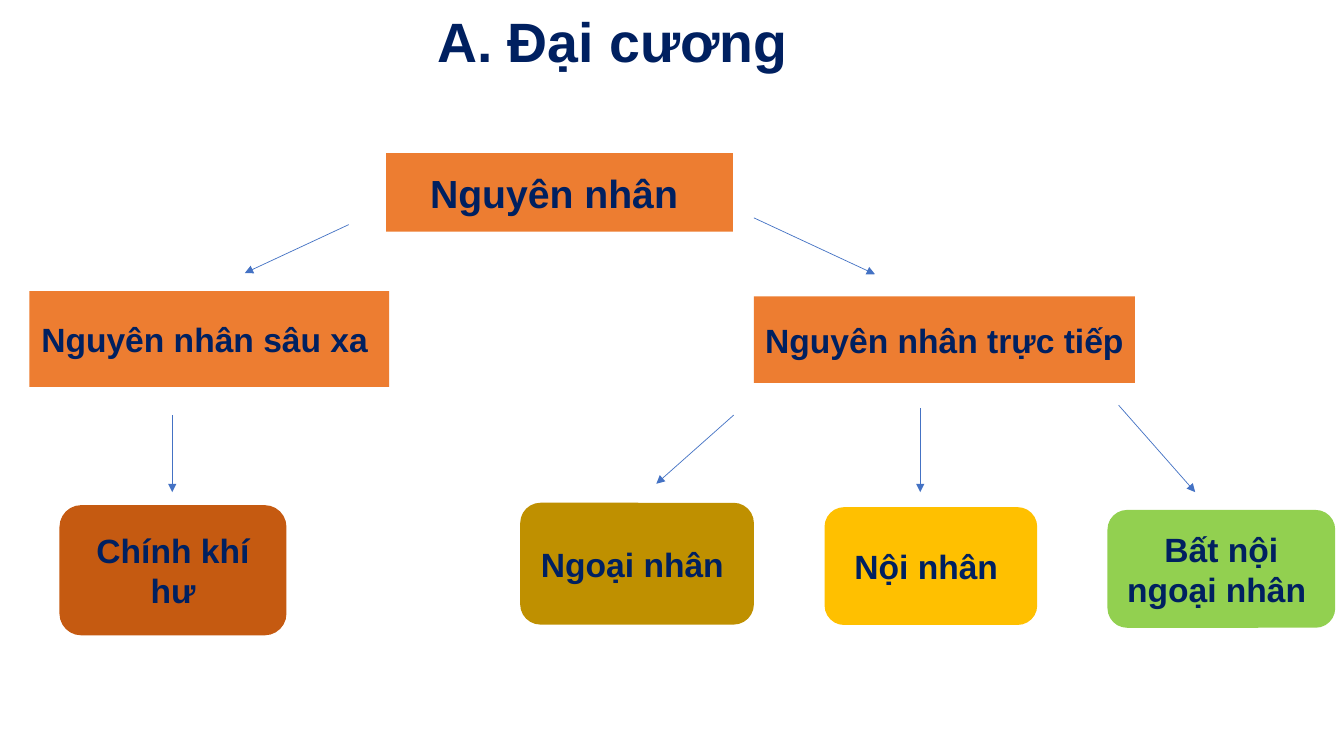
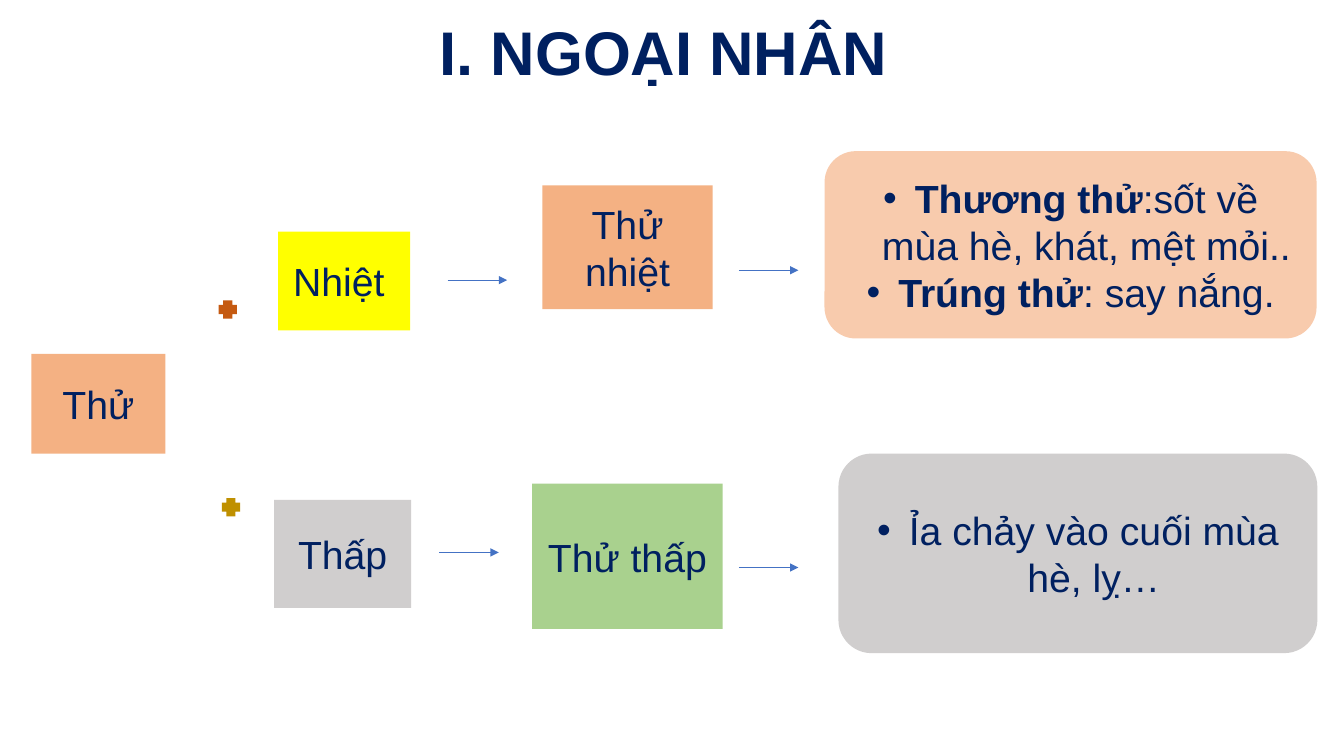
from lxml import etree
from pptx import Presentation
from pptx.dml.color import RGBColor
from pptx.enum.shapes import MSO_CONNECTOR as Connector, MSO_SHAPE as Shape
from pptx.enum.text import MSO_ANCHOR as Anchor, MSO_AUTO_SIZE as AutoSize, PP_ALIGN as Align
from pptx.oxml.ns import qn
from pptx.util import Cm, Pt

# Shared look
FONT = "Arial"
NAVY = RGBColor(0x00, 0x20, 0x60)
BLUE = RGBColor(0x44, 0x72, 0xC4)
ORANGE = RGBColor(0xED, 0x7D, 0x31)
RUST = RGBColor(0xC5, 0x5A, 0x11)
OCHRE = RGBColor(0xBF, 0x90, 0x00)
AMBER = RGBColor(0xFF, 0xC0, 0x00)
LIME = RGBColor(0x92, 0xD0, 0x50)
APRICOT = RGBColor(0xF4, 0xB1, 0x83)
PEACH = RGBColor(0xF8, 0xCB, 0xAD)
YELLOW = RGBColor(0xFF, 0xFF, 0x00)
GREY = RGBColor(0xD0, 0xCE, 0xCE)
GREEN = RGBColor(0xA9, 0xD1, 0x8E)
BULLET_INDENT = Cm(0.8)
RECT, ROUND, PLUS = Shape.RECTANGLE, Shape.ROUNDED_RECTANGLE, Shape.CROSS

# Content: all places are in centimetres.
# Boxes: preset, (left, top, width, height), fill, text size, bold, text;
# a list as text holds bulleted paragraphs of (bold lead, plain rest).
# Arrows: (start x, start y, end x, end y).
PAGES = [
    {
        "title": ("A. Đại cương ", 39.6, (0.43, 0.23, 30.4, 1.78)),
        "boxes": [
            (RECT, (9.73, 3.86, 8.74, 1.98), ORANGE, 28, True, "Nguyên nhân "),
            (RECT, (0.74, 7.34, 9.07, 2.41), ORANGE, 24, True, "Nguyên nhân sâu xa "),
            (RECT, (19, 7.47, 9.6, 2.18), ORANGE, 24, True, "Nguyên nhân trực tiếp "),
            (ROUND, (1.5, 12.73, 5.72, 3.28), RUST, 24, True, "Chính khí hư"),
            (ROUND, (13.11, 12.67, 5.89, 3.07), OCHRE, 24, True, "Ngoại nhân "),
            (ROUND, (20.78, 12.78, 5.36, 2.97), AMBER, 24, True, "Nội nhân "),
            (ROUND, (27.91, 12.85, 5.74, 2.97), LIME, 24, True, "Bất nội ngoại nhân "),
        ],
        "arrows": [
            (8.79, 5.66, 6.17, 6.88),
            (19, 5.49, 22.05, 6.91),
            (4.34, 10.46, 4.34, 12.4),
            (18.49, 10.46, 16.54, 12.19),
            (23.19, 10.29, 23.19, 12.4),
            (28.19, 10.21, 30.12, 12.4),
        ],
    },
    {
        "title": ("I. NGOẠI NHÂN ", 44, (2.34, 0.25, 29.21, 2.29)),
        "boxes": [
            (RECT, (0.79, 8.92, 3.38, 2.51), APRICOT, 28, False, "Thử"),
            (RECT, (7.01, 5.84, 3.33, 2.49), YELLOW, 28, False, "Nhiệt "),
            (RECT, (6.91, 12.6, 3.45, 2.72), GREY, 28, False, "Thấp"),
            (RECT, (13.67, 4.67, 4.29, 3.12), APRICOT, 28, False, "Thử nhiệt"),
            (RECT, (13.41, 12.19, 4.8, 3.66), GREEN, 28, False, "Thử thấp"),
            (ROUND, (20.78, 3.81, 12.4, 4.72), PEACH, 28, False, [
                ("Thương thử", ":sốt về mùa hè, khát, mệt mỏi.."),
                ("Trúng thử", ": say nắng."),
            ]),
            (ROUND, (21.13, 11.43, 12.07, 5.03), GREY, 28, False, [
                ("", "Ỉa chảy vào cuối mùa hè, lỵ…"),
            ]),
            (PLUS, (5.51, 7.57, 0.46, 0.46), RUST, 28, False, ""),
            (PLUS, (5.59, 12.55, 0.46, 0.46), OCHRE, 28, False, ""),
        ],
        "arrows": [
            (11.28, 7.06, 12.78, 7.06),
            (11.07, 13.92, 12.57, 13.92),
            (18.62, 6.81, 20.12, 6.81),
            (18.62, 14.3, 20.12, 14.3),
        ],
    },
]


def add_span(para, text, size, bold):
    span = para.add_run()
    span.text = text
    span.font.color.rgb = NAVY
    for name, value in {"name": FONT, "size": Pt(size), "bold": bold}.items():
        setattr(span.font, name, value)


def add_bullet(para):
    props = para._p.get_or_add_pPr()
    props.set("marL", str(BULLET_INDENT))
    props.set("indent", str(-BULLET_INDENT))
    etree.SubElement(props, qn("a:buFont"), typeface=FONT)
    etree.SubElement(props, qn("a:buChar"), char="•")


def write_text(frame, text, size, bold):
    frame_format = {"word_wrap": True, "auto_size": AutoSize.NONE,
                    "vertical_anchor": Anchor.MIDDLE}
    for name, value in frame_format.items():
        setattr(frame, name, value)
    bulleted = isinstance(text, list)
    for index, parts in enumerate(text if bulleted else [text]):
        para = frame.add_paragraph() if index else frame.paragraphs[0]
        para.alignment = Align.CENTER
        if bulleted:
            add_bullet(para)
            for part, strong in zip(parts, (True, False)):
                if part:
                    add_span(para, part, size, strong)
        else:
            add_span(para, parts, size, bold)


def set_title(page, text, size, place):
    title = page.shapes.title
    for name, value in zip(("left", "top", "width", "height"), place):
        setattr(title, name, Cm(value))
    write_text(title.text_frame, text, size, True)
    title.text_frame.paragraphs[0].line_spacing = 0.9


def add_box(page, preset, place, fill, size, bold, text):
    box = page.shapes.add_shape(preset, *map(Cm, place))
    box.shadow.inherit = False
    box.fill.solid()
    box.fill.fore_color.rgb = fill
    box.line.fill.background()
    if text:
        write_text(box.text_frame, text, size, bold)


def add_arrow(page, ends):
    arrow = page.shapes.add_connector(Connector.STRAIGHT, *map(Cm, ends))
    arrow.line.color.rgb = BLUE
    arrow.line.width = Pt(0.5)
    etree.SubElement(arrow.line._get_or_add_ln(), qn("a:tailEnd"), type="triangle")
    etree.SubElement(arrow._element.spPr, qn("a:effectLst"))


def main():
    deck = Presentation()
    deck.slide_width, deck.slide_height = Cm(33.87), Cm(19.05)
    title_only = deck.slide_layouts[5]
    for content in PAGES:
        page = deck.slides.add_slide(title_only)
        set_title(page, *content["title"])
        for box in content["boxes"]:
            add_box(page, *box)
        for ends in content["arrows"]:
            add_arrow(page, ends)
    deck.save("out.pptx")


if __name__ == "__main__":
    main()
